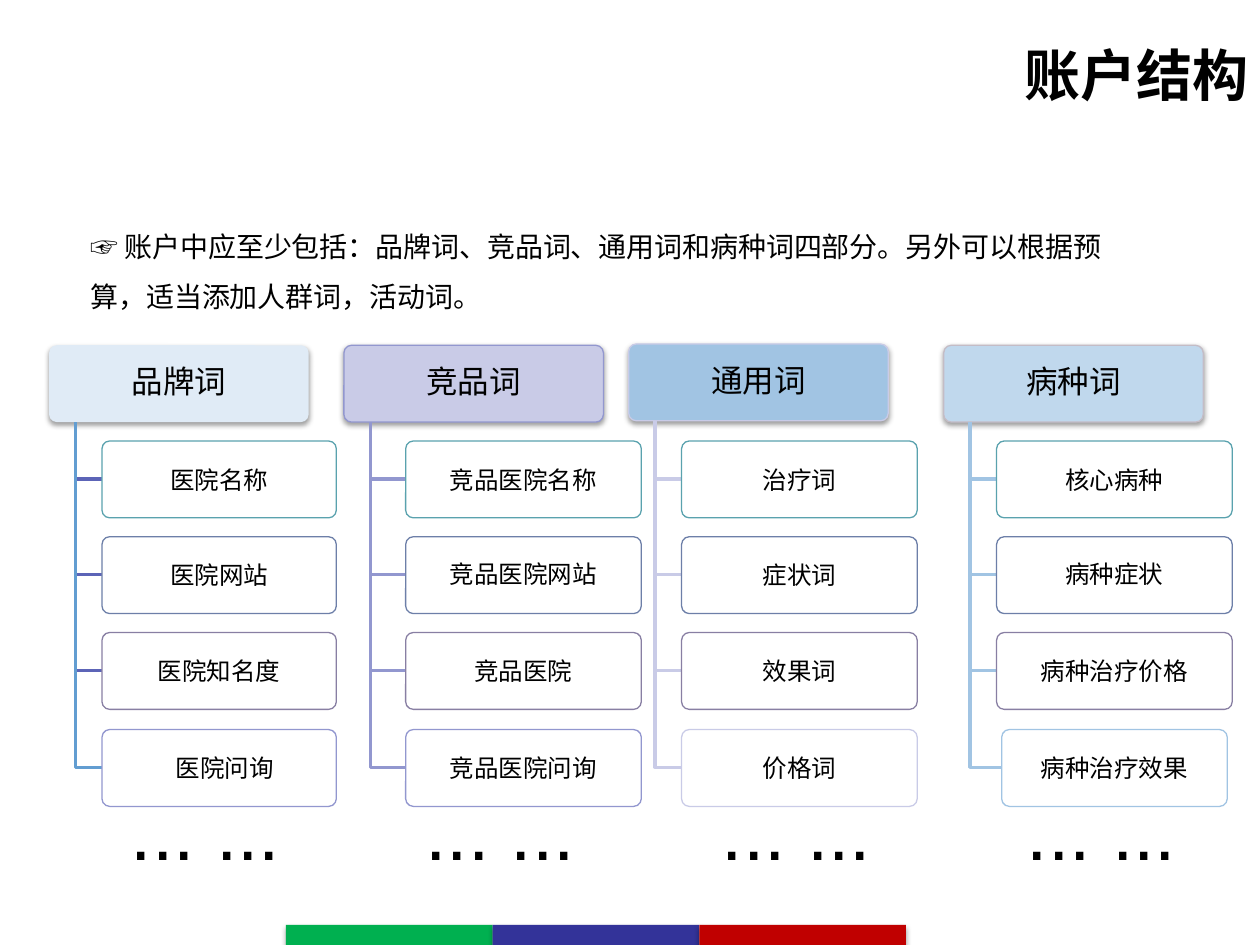
"""Build the account structure slide with four keyword trees."""
from dataclasses import dataclass
from typing import Optional

import lxml.etree
import pptx
import pptx.dml.color
import pptx.enum.shapes
import pptx.enum.text
import pptx.oxml.ns
import pptx.util

RGBColor = pptx.dml.color.RGBColor
Align = pptx.enum.text.PP_ALIGN
Anchor = pptx.enum.text.MSO_ANCHOR
Preset = pptx.enum.shapes.MSO_SHAPE
qn = pptx.oxml.ns.qn

EMU_PER_PX = 9144
CJK_FONT = "Noto Sans CJK SC"
LATIN_FONT = "Arial"

BLACK = RGBColor(0x00, 0x00, 0x00)
WHITE = RGBColor(0xFF, 0xFF, 0xFF)
PALE_BLUE = RGBColor(0xE0, 0xEB, 0xF6)
LIGHT_BLUE = RGBColor(0xC0, 0xD8, 0xED)
SKY_BLUE = RGBColor(0xA1, 0xC4, 0xE3)
BRIGHT_BLUE = RGBColor(0x62, 0x9D, 0xD1)
INDIGO = RGBColor(0x5C, 0x64, 0xB7)
LAVENDER = RGBColor(0xC9, 0xCB, 0xE7)
PERIWINKLE = RGBColor(0x92, 0x97, 0xCF)
TEAL = RGBColor(0x5A, 0xA2, 0xAE)
SLATE = RGBColor(0x6D, 0x7F, 0xA8)
MAUVE = RGBColor(0x88, 0x7F, 0xA3)
GREY_PINK = RGBColor(0xC4, 0xBC, 0xC6)
GREEN = RGBColor(0x00, 0xB0, 0x50)
NAVY = RGBColor(0x33, 0x33, 0x99)
RED = RGBColor(0xC0, 0x00, 0x00)

HEADER_WIDTH, BOX_HEIGHT, TRUNK_OFFSET = 206, 61, 21
LEAF_TOP, LEAF_SPAN = 350, 229


@dataclass(frozen=True)
class Box:
    left: int
    top: int
    width: int
    height: int


@dataclass(frozen=True)
class TextStyle:
    size: int
    font: str = CJK_FONT
    bold: bool = False
    align: Align = Align.LEFT
    anchor: Anchor = Anchor.TOP
    spacing: float = 1.0
    insets: tuple[int, int, int, int] = (10, 5, 10, 5)


@dataclass(frozen=True)
class Leaf:
    text: str
    spacing: float = 1.0
    inset_left: int = 3


@dataclass(frozen=True)
class Tree:
    title: str
    left: int
    top: int
    leaf_left: int
    leaf_width: int
    fill: RGBColor
    outline: Optional[RGBColor]
    branch: RGBColor
    last_branch: RGBColor
    last_outline: RGBColor
    leaves: tuple[Leaf, ...]
    last_inset: int = 0


FIRST_TREES = (
    Tree("品牌词", 39, 274, 81, 186, PALE_BLUE, None, INDIGO, BRIGHT_BLUE, PERIWINKLE,
         (Leaf("医院名称"), Leaf("医院网站"), Leaf("医院知名度"), Leaf("医院问询", inset_left=12))),
    Tree("竞品词", 273, 274, 322, 187, LAVENDER, PERIWINKLE, PERIWINKLE, PERIWINKLE, PERIWINKLE,
         (Leaf("竞品医院名称"), Leaf("竞品医院网站", 0.9), Leaf("竞品医院"), Leaf("竞品医院问询"))),
)
LAST_TREES = (
    Tree("病种词", 749, 274, 791, 187, LIGHT_BLUE, GREY_PINK, SKY_BLUE, SKY_BLUE, SKY_BLUE,
         (Leaf("核心病种"), Leaf("病种症状", 0.9), Leaf("病种治疗价格"), Leaf("病种治疗效果")), 4),
    Tree("通用词", 499, 273, 541, 187, SKY_BLUE, LAVENDER, LAVENDER, LAVENDER, LAVENDER,
         (Leaf("治疗词"), Leaf("症状词"), Leaf("效果词"), Leaf("价格词"))),
)
INTRO = "☞ 账户中应至少包括：品牌词、竞品词、通用词和病种词四部分。另外可以根据预算，适当添加人群词，活动词。"


def px(length: int) -> pptx.util.Emu:
    return pptx.util.Emu(length * EMU_PER_PX)


def place(box: Box) -> tuple:
    return px(box.left), px(box.top), px(box.width), px(box.height)


def write_text(shape, text: str, style: TextStyle) -> None:
    frame = shape.text_frame
    frame.word_wrap = True
    frame.vertical_anchor = style.anchor
    frame.margin_left, frame.margin_top, frame.margin_right, frame.margin_bottom = map(px, style.insets)
    para = frame.paragraphs[0]
    para.alignment = style.align
    para.line_spacing = style.spacing
    span = para.add_run()
    span.text = text
    span.font.size = pptx.util.Pt(style.size)
    span.font.bold = style.bold
    span.font.color.rgb = BLACK
    span.font.name = style.font
    lxml.etree.SubElement(span.font._element, qn("a:ea"), typeface=style.font)


def add_label(slide, box: Box, text: str, style: TextStyle) -> None:
    write_text(slide.shapes.add_textbox(*place(box)), text, style)


def add_panel(slide, box: Box, fill: RGBColor, outline: Optional[RGBColor], preset: Preset = Preset.ROUNDED_RECTANGLE):
    shape = slide.shapes.add_shape(preset, *place(box))
    shape.shadow.inherit = False
    shape.fill.solid()
    shape.fill.fore_color.rgb = fill
    if preset == Preset.ROUNDED_RECTANGLE:
        shape.adjustments[0] = 0.1
    if outline is None:
        shape.line.fill.background()
    else:
        shape.line.color.rgb = outline
        shape.line.width = pptx.util.Pt(0.75)
    return shape


def add_shadow(shape, opacity: int, distance: float) -> None:
    effects = shape._element.spPr.find(qn("a:effectLst"))
    shadow = lxml.etree.SubElement(
        effects, qn("a:outerShdw"), blurRad=str(pptx.util.Pt(3.1)),
        dist=str(pptx.util.Pt(distance)), dir="5400000", rotWithShape="0")
    color = lxml.etree.SubElement(shadow, qn("a:srgbClr"), val=str(BLACK))
    lxml.etree.SubElement(color, qn("a:alpha"), val=str(opacity * 1000))


def add_elbow(slide, trunk: int, top: int, end: int, middle: int, color: RGBColor) -> None:
    builder = slide.shapes.build_freeform(px(trunk), px(top))
    builder.add_line_segments([(px(trunk), px(middle)), (px(end), px(middle))], close=False)
    elbow = builder.convert_to_shape()
    elbow.shadow.inherit = False
    elbow.fill.background()
    elbow.line.color.rgb = color
    elbow.line.width = pptx.util.Pt(2)


def draw_tree(slide, tree: Tree) -> None:
    header = add_panel(slide, Box(tree.left, tree.top, HEADER_WIDTH, BOX_HEIGHT), tree.fill, tree.outline)
    add_shadow(header, 38, 1.6)
    write_text(header, tree.title, TextStyle(18, align=Align.CENTER, anchor=Anchor.MIDDLE,
                                             spacing=0.9, insets=(4, 3, 4, 3)))
    last = len(tree.leaves) - 1
    outlines = (TEAL, SLATE, MAUVE, tree.last_outline)
    for index, (leaf, outline) in enumerate(zip(tree.leaves, outlines)):
        inset = tree.last_inset if index == last else 0
        box = Box(tree.leaf_left + inset, LEAF_TOP + LEAF_SPAN * index // last,
                  tree.leaf_width - 2 * inset, BOX_HEIGHT)
        add_elbow(slide, tree.left + TRUNK_OFFSET, tree.top + BOX_HEIGHT, box.left,
                  box.top + BOX_HEIGHT // 2, tree.last_branch if index == last else tree.branch)
        card = add_panel(slide, box, WHITE, outline)
        color = card._element.spPr.find(qn("a:solidFill"))[0]
        lxml.etree.SubElement(color, qn("a:alpha"), val="90000")
        write_text(card, leaf.text, TextStyle(14, align=Align.CENTER, anchor=Anchor.MIDDLE,
                                              spacing=leaf.spacing, insets=(leaf.inset_left, 2, 3, 2)))


def main() -> None:
    deck = pptx.Presentation()
    deck.slide_width, deck.slide_height = px(1000), px(750)
    page = deck.slides.add_slide(deck.slide_layouts[6])
    for tree in FIRST_TREES:
        draw_tree(page, tree)
    add_label(page, Box(62, 164, 837, 91), INTRO, TextStyle(16, spacing=1.5))
    for tree in LAST_TREES:
        draw_tree(page, tree)
    for left in (94, 328, 563, 805):
        add_label(page, Box(left, 617, 195, 84), "... ...", TextStyle(44, font=LATIN_FONT))
    add_label(page, Box(197, 2, 804, 113), "账户结构",
              TextStyle(32, bold=True, align=Align.RIGHT, anchor=Anchor.MIDDLE))
    for index, color in enumerate((GREEN, NAVY, RED)):
        bar = add_panel(page, Box(227 + 164 * index, 734, 164, 16), color, None, Preset.RECTANGLE)
        add_shadow(bar, 35, 1.8)
    deck.save("out.pptx")


if __name__ == "__main__":
    main()
